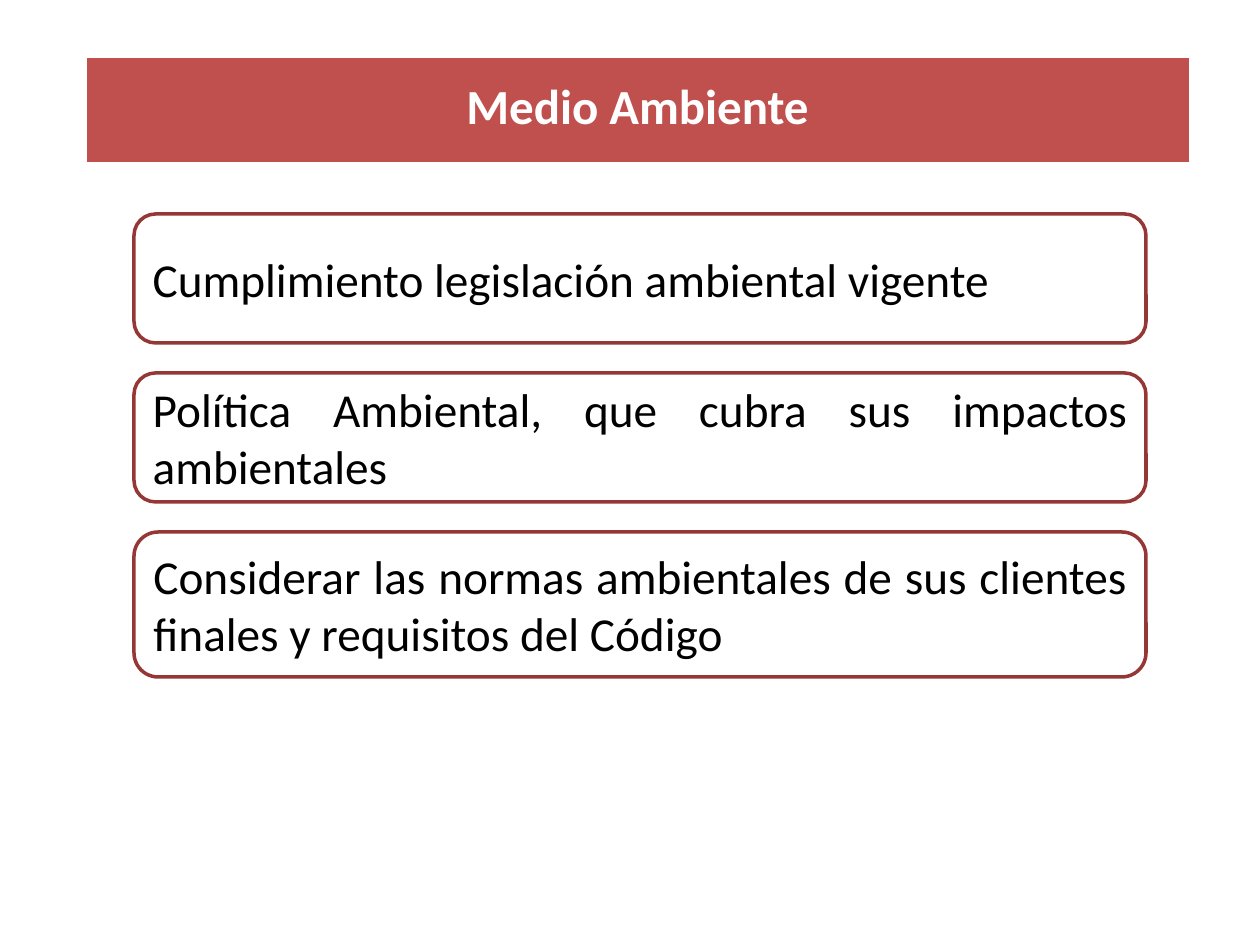
from pptx import Presentation
from pptx.dml.color import RGBColor
from pptx.enum.shapes import MSO_SHAPE as Shape
from pptx.enum.text import MSO_ANCHOR as Anchor, MSO_AUTO_SIZE as AutoSize, PP_ALIGN as Align
from pptx.util import Pt

EMU_PER_PX = 914400 / 126
RED = RGBColor(0xC0, 0x50, 0x4D)
DARK_RED = RGBColor(0x95, 0x37, 0x35)
WHITE = RGBColor(0xFF, 0xFF, 0xFF)
BLACK = RGBColor(0x00, 0x00, 0x00)


def px(length):
    return round(length * EMU_PER_PX)


class SlideBuilder:
    font_name = "Calibri"
    title_size = 28
    body_size = 27
    line_width = 2

    def __init__(self, slide):
        self.slide = slide

    def add_box(self, kind, left, top, width, height, line, fill=None):
        shape = self.slide.shapes.add_shape(kind, px(left), px(top), px(width), px(height))
        shape.shadow.inherit = False
        if fill is None:
            shape.fill.background()
        else:
            shape.fill.solid()
            shape.fill.fore_color.rgb = fill
        shape.line.color.rgb = line
        shape.line.width = Pt(self.line_width)
        return shape

    def add_text(self, shape, text, size, color, align, bold=False):
        frame = shape.text_frame
        frame.word_wrap = True
        frame.auto_size = AutoSize.NONE
        frame.vertical_anchor = Anchor.MIDDLE
        paragraph = frame.paragraphs[0]
        paragraph.alignment = align
        run = paragraph.add_run()
        run.text = text
        run.font.name = self.font_name
        run.font.size = Pt(size)
        run.font.bold = bold
        run.font.color.rgb = color
        return paragraph

    def add_title(self, text, left, top, width, height):
        title = self.slide.shapes.title
        title.left, title.top = px(left), px(top)
        title.width, title.height = px(width), px(height)
        paragraph = self.add_text(title, text, self.title_size, WHITE, Align.CENTER, bold=True)
        paragraph.line_spacing = 0.9
        # Bring the title in front of its band
        self.slide.shapes.element.append(title.element)

    def add_card(self, text, left, top, width, height):
        card = self.add_box(Shape.ROUNDED_RECTANGLE, left, top, width, height, DARK_RED)
        self.add_text(card, text, self.body_size, BLACK, Align.JUSTIFY)


def main():
    presentation = Presentation()
    presentation.slide_width, presentation.slide_height = px(1260), px(945)
    builder = SlideBuilder(presentation.slides.add_slide(presentation.slide_layouts[5]))

    # Title band
    builder.add_box(Shape.RECTANGLE, 85, 56, 1106, 108, WHITE, RED)
    builder.add_title("Medio Ambiente", 92, 60, 1091, 98)

    # Commitment cards, stacked with an equal gap
    cards = [
        ("Cumplimiento legislación ambiental vigente", 129),
        ("Política Ambiental, que cubra sus impactos ambientales", 129),
        ("Considerar las normas ambientales de sus clientes finales y requisitos del Código", 145),
    ]
    top, gap = 214, 30
    for text, height in cards:
        builder.add_card(text, 134, top, 1012, height)
        top += height + gap

    presentation.save("out.pptx")


if __name__ == "__main__":
    main()
